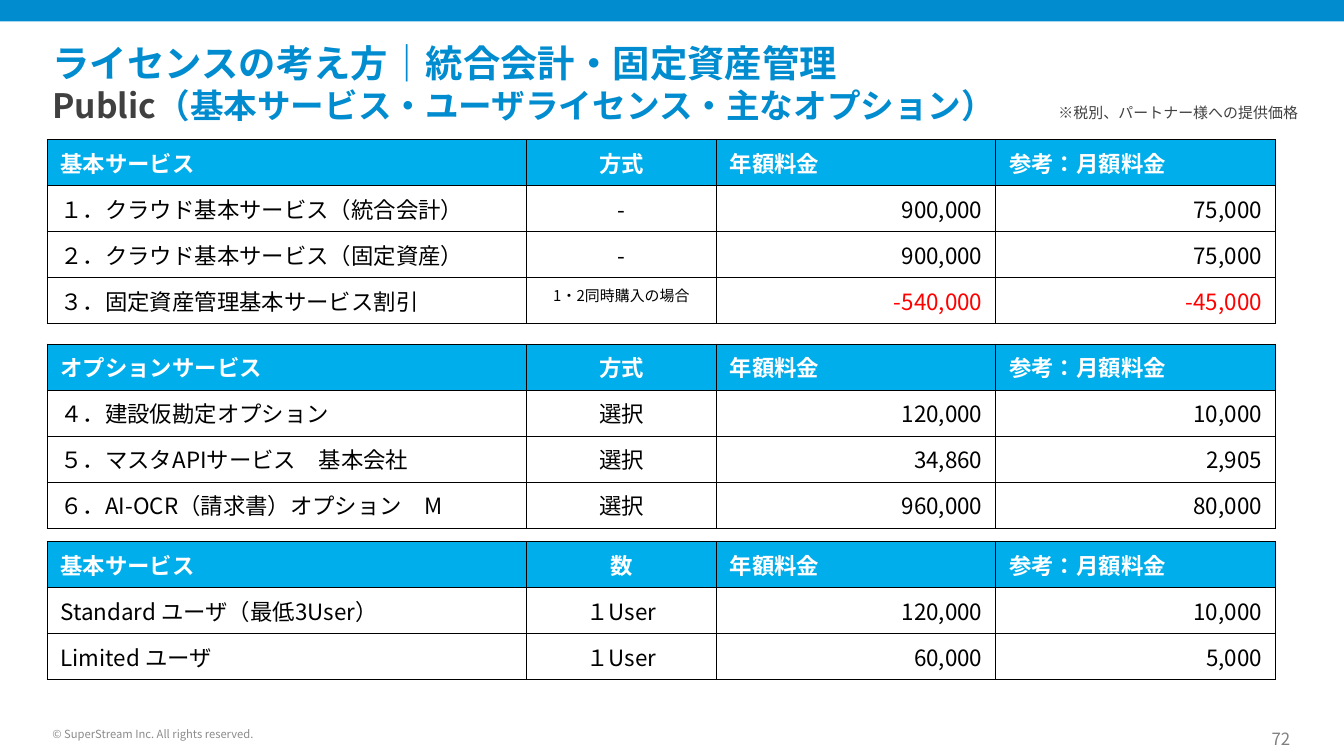
"""Build the licence pricing slide with three price tables."""
from pptx import Presentation
from pptx.dml.color import RGBColor as RGB
from pptx.enum.lang import MSO_LANGUAGE_ID as LANG
from pptx.enum.shapes import MSO_SHAPE as SHAPE
from pptx.enum.text import MSO_ANCHOR as ANCHOR, PP_ALIGN as ALIGN
from pptx.oxml import parse_xml
from pptx.oxml.ns import nsdecls
from pptx.util import Inches, Pt

BLUE, SKY = RGB(0x00, 0x8C, 0xCF), RGB(0x00, 0xAE, 0xEB)
WHITE, BLACK, RED = RGB(255, 255, 255), RGB(0, 0, 0), RGB(255, 0, 0)
DARK, GREY, PALE = RGB(0x40, 0x40, 0x40), RGB(0x80, 0x80, 0x80), RGB(0x8C, 0x8C, 0x8C)
FONT = "Noto Sans CJK JP"
COLS, ROW = (3.57, 1.41, 2.08, 2.08), 0.34
PRICES = ("年額料金", "参考：月額料金")
TABLES = [
    (1.04, [("基本サービス", "方式", *PRICES),
            ("１．クラウド基本サービス（統合会計）", "-", "900,000", "75,000"),
            ("２．クラウド基本サービス（固定資産）", "-", "900,000", "75,000"),
            ("３．固定資産管理基本サービス割引", "1・2同時購入の場合", "-540,000", "-45,000")]),
    (2.56, [("オプションサービス", "方式", *PRICES),
            ("４．建設仮勘定オプション", "選択", "120,000", "10,000"),
            ("５．マスタAPIサービス　基本会社", "選択", "34,860", "2,905"),
            ("６．AI-OCR（請求書）オプション　M", "選択", "960,000", "80,000")]),
    (4.03, [("基本サービス", "数", *PRICES),
            ("Standard ユーザ（最低3User）", "１User", "120,000", "10,000"),
            ("Limited ユーザ", "１User", "60,000", "5,000")]),
]
LABELS = [
    ("※税別、パートナー様への提供価格", (6.25, 0.72, 3.51, 0.24), 8, DARK, ALIGN.RIGHT, ANCHOR.TOP, (0.1, 0.05)),
    ("© SuperStream Inc. All rights reserved.", (0.39, 5.36, 2.36, 0.15), 6, PALE, ALIGN.LEFT, ANCHOR.BOTTOM, (0, 0)),
    ("72", (9.21, 5.42, 0.39, 0.15), 9, GREY, ALIGN.RIGHT, ANCHOR.BOTTOM, (0, 0)),
]


def style(font, size, color, bold=False):
    font.name, font.size, font.bold = FONT, Pt(size), bold
    font.language_id = LANG.JAPANESE
    font.color.rgb = color
    font._element.find("{*}latin").addnext(parse_xml(f'<a:ea {nsdecls("a")} typeface="{FONT}"/>'))


def set_frame(tf, anchor, inset_x=0, inset_y=0):
    tf.word_wrap, tf.vertical_anchor = True, anchor
    tf.margin_left = tf.margin_right = Inches(inset_x)
    tf.margin_top = tf.margin_bottom = Inches(inset_y)


prs = Presentation()
prs.slide_width = Inches(10)
prs.slide_height = prs.slide_width * 9 // 16
s = prs.slides.add_slide(prs.slide_layouts[5])

bar = s.shapes.add_shape(SHAPE.RECTANGLE, 0, 0, prs.slide_width, Inches(0.16))
bar.shadow.inherit = False
bar.fill.solid()
bar.fill.fore_color.rgb = BLUE
bar.line.fill.background()

title = s.shapes.title
title.left, title.top, title.width, title.height = map(Inches, (0.39, 0.29, 7.76, 0.64))
set_frame(title.text_frame, ANCHOR.BOTTOM)
p = title.text_frame.paragraphs[0]
p.alignment, p.line_spacing = ALIGN.LEFT, 1.0
for text, size, color in [("ライセンスの考え方｜統合会計・固定資産管理", 20, BLUE),
                          ("Public", 18, DARK),
                          ("（基本サービス・ユーザライセンス・主なオプション）", 18, BLUE)]:
    if text == "Public":
        p.add_line_break()
    r = p.add_run()
    r.text = text
    style(r.font, size, color, True)

for top, rows in TABLES:
    frame = s.shapes.add_table(len(rows), len(COLS), Inches(0.35), Inches(top),
                               Inches(sum(COLS)), Inches(ROW * len(rows)))
    table = frame.table
    for column, width in zip(table.columns, COLS):
        column.width = Inches(width)
    for i, row in enumerate(rows):
        table.rows[i].height = Inches(ROW)
        for j, text in enumerate(row):
            cell = table.cell(i, j)
            for side in "LRTB":
                cell._tc.get_or_add_tcPr().append(parse_xml(
                    f'<a:ln{side} {nsdecls("a")} w="6350"><a:solidFill>'
                    f'<a:srgbClr val="{BLACK}"/></a:solidFill></a:ln{side}>'))
            cell.fill.solid()
            cell.fill.fore_color.rgb = WHITE if i else SKY
            cell.text = text
            p = cell.text_frame.paragraphs[0]
            number_align = ALIGN.RIGHT if i else ALIGN.LEFT
            p.alignment = (ALIGN.LEFT, ALIGN.CENTER, number_align, number_align)[j]
            color = WHITE if i == 0 else RED if j > 1 and text.startswith("-") else BLACK
            style(p.font, 8 if "同時購入" in text else 12, color, i == 0)

for text, box, size, color, align, anchor, insets in LABELS:
    tf = s.shapes.add_textbox(*map(Inches, box)).text_frame
    set_frame(tf, anchor, *insets)
    p = tf.paragraphs[0]
    p.text, p.alignment = text, align
    style(p.font, size, color)

prs.save("out.pptx")
